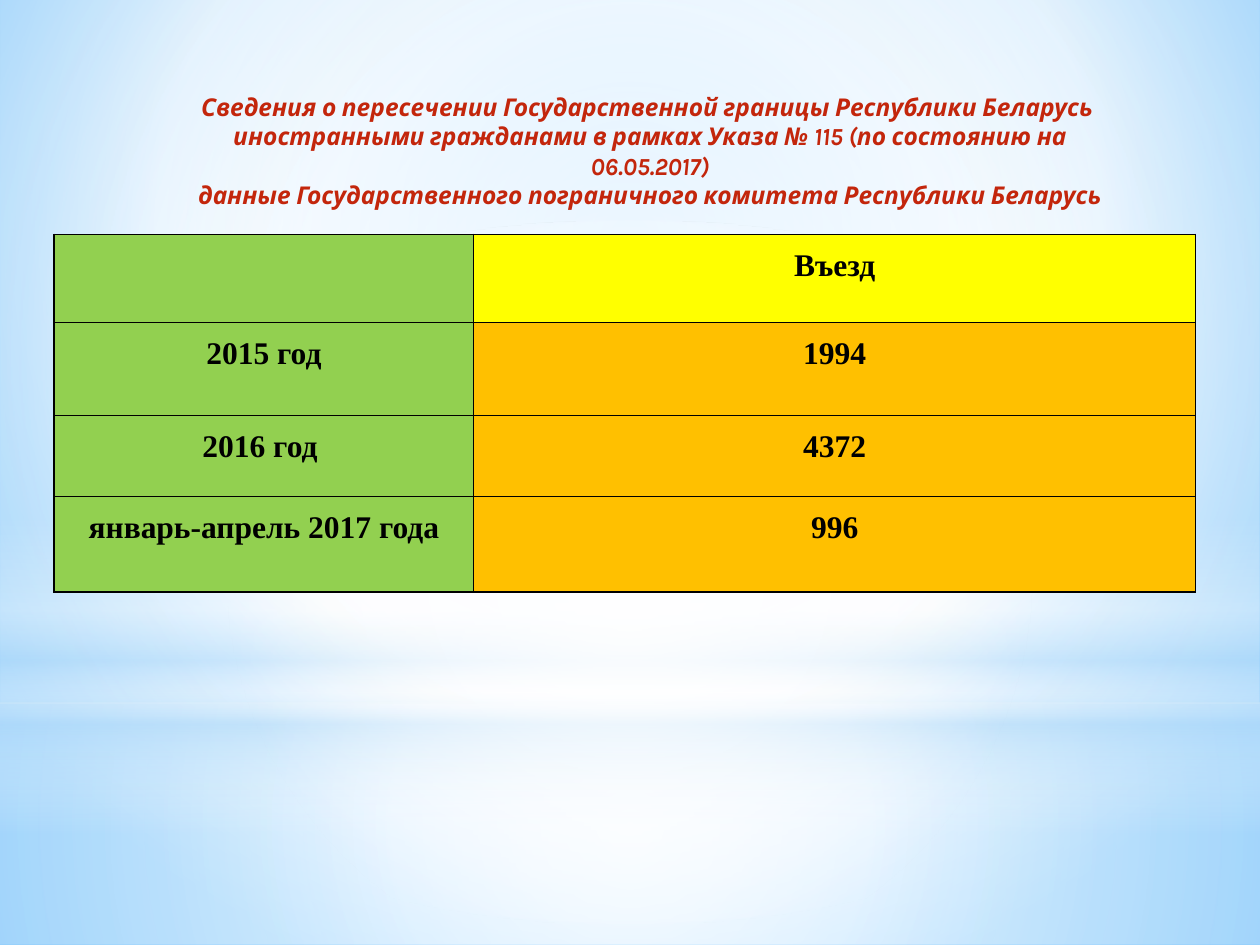
from dataclasses import dataclass
from lxml.etree import SubElement as Sub
from pptx import Presentation
from pptx.dml.color import RGBColor as RGB
from pptx.enum.shapes import MSO_SHAPE as Shape
from pptx.enum.text import MSO_ANCHOR as Anchor, MSO_AUTO_SIZE as Auto, PP_ALIGN as Align
from pptx.oxml.ns import qn
from pptx.util import Inches, Pt


@dataclass(frozen=True)
class Theme:
    red: str = "C3260C"
    black: str = "000000"
    white: str = "FFFFFF"
    pale: str = "B4DCFA"
    sky: str = "9ED5FF"
    blue: str = "5BB9FF"
    green: str = "92D050"
    yellow: str = "FFFF00"
    amber: str = "FFC000"
    head: int = 14
    body: int = 18
    lead: int = 14


T = Theme()
MID = (50, 50, 50, 50)
GLOWS = [
    (Shape.RECTANGLE, (0, 5.58, 10, 1.92), MID,
     [(0, T.white, 91), (37, T.white, 76), (100, T.pale, 79)]),
    (Shape.RECTANGLE, (0, 0, 10, 5.58), MID,
     [(0, T.white, 89), (48, T.white, 62), (100, T.pale, 79)]),
    (Shape.RECTANGLE, (0, 4.12, 10, 2.5), None,
     [(0, T.white, 0), (29, T.white, 30), (45, T.pale, 40),
      (55, T.white, 26), (65, T.pale, 60), (100, T.white, 0)]),
    (Shape.OVAL, (0, 1.75, 10, 5.58), MID,
     [(0, T.white, 100), (56, T.white, 0)]),
]
TITLE = [
    "Сведения о пересечении Государственной границы Республики Беларусь ",
    "иностранными гражданами в рамках Указа № 115 (по состоянию на 06.05.2017)",
    "данные Государственного пограничного комитета Республики Беларусь",
]
COLS = [3.33, 5.73]
ROWS = [0.7, 0.74, 0.64, 0.76]
DATA = [
    ("", "Въезд"),
    ("2015 год", "1994"),
    ("2016 год ", "4372"),
    ("январь-апрель 2017 года", "996"),
]


def apply(obj, vals):
    for name, val in vals.items():
        setattr(obj, name, val)


def place(box):
    return [Inches(n) for n in box]


def blend(fill, root, stops, focus):
    """Fill with a gradient: round about focus, or top to bottom without one."""
    fill.gradient()
    grad = next(root.iter(qn("a:gradFill")))
    for old in list(grad):
        grad.remove(old)
    items = Sub(grad, qn("a:gsLst"))
    for pos, tint, alpha in stops:
        stop = Sub(items, qn("a:gs"), pos=str(pos * 1000))
        color = Sub(stop, qn("a:srgbClr"), val=tint)
        if alpha < 100:
            Sub(color, qn("a:alpha"), val=str(alpha * 1000))
    if focus:
        round_ = Sub(grad, qn("a:path"), {"path": "circle"})
        sides = {side: str(n * 1000) for side, n in zip("ltrb", focus)}
        Sub(round_, qn("a:fillToRect"), sides)
    else:
        Sub(grad, qn("a:lin"), ang="5400000", scaled="0")


def add_glow(slide, kind, box, focus, stops):
    glow = slide.shapes.add_shape(kind, *place(box))
    glow.shadow.inherit = False
    glow.line.fill.background()
    blend(glow.fill, glow.element, stops, focus)


def write(para, text, color, font, **more):
    para.alignment = Align.CENTER
    run = para.add_run()
    run.text = text
    apply(run.font, {"name": font, "bold": True, **more})
    run.font.color.rgb = RGB.from_string(color)


def add_title(slide):
    title = slide.shapes.title
    slide.shapes.element.append(title.element)  # in front of the glows
    names = ("left", "top", "width", "height")
    apply(title, dict(zip(names, place((1.3, 0.68, 7.72, 1.04)))))
    frame = title.text_frame
    apply(frame, {"word_wrap": True, "vertical_anchor": Anchor.TOP,
                  "auto_size": Auto.SHAPE_TO_FIT_TEXT})
    for i, line in enumerate(TITLE):
        para = frame.add_paragraph() if i else frame.paragraphs[0]
        write(para, line, T.red, "Karla", size=Pt(T.head), italic=True)


def edge(cell):
    props = cell._tc.get_or_add_tcPr()
    for side in "LRTB":
        line = Sub(props, qn(f"a:ln{side}"), w=str(Pt(1)))
        Sub(Sub(line, qn("a:solidFill")), qn("a:srgbClr"), val=T.black)


def fill_cell(cell, text, tint):
    edge(cell)
    cell.fill.solid()
    cell.fill.fore_color.rgb = RGB.from_string(tint)
    apply(cell, {"margin_left": Inches(0.07), "margin_right": Inches(0.07),
                 "margin_top": Pt(T.lead), "margin_bottom": 0})
    if text:
        para = cell.text_frame.paragraphs[0]
        para.line_spacing = Pt(T.lead)
        write(para, text, T.black, "Times New Roman", size=Pt(T.body))


def add_grid(slide):
    box = place((0.43, 1.86, sum(COLS), sum(ROWS)))
    grid = slide.shapes.add_table(len(ROWS), len(COLS), *box).table
    for col, wide in zip(grid.columns, COLS):
        col.width = Inches(wide)
    for r, (row, tall) in enumerate(zip(grid.rows, ROWS)):
        row.height = Inches(tall)
        tints = (T.green, T.amber if r else T.yellow)
        for cell, text, tint in zip(row.cells, DATA[r], tints):
            fill_cell(cell, text, tint)


def main():
    deck = Presentation()
    apply(deck, {"slide_width": Inches(10), "slide_height": Inches(7.5)})
    slide = deck.slides.add_slide(deck.slide_layouts[5])
    stops = [(0, T.sky, 100), (60, T.white, 100), (100, T.blue, 100)]
    blend(slide.background.fill, slide.element, stops, (20, 10, 20, 60))
    for glow in GLOWS:
        add_glow(slide, *glow)
    add_title(slide)
    add_grid(slide)
    deck.save("out.pptx")


if __name__ == "__main__":
    main()
